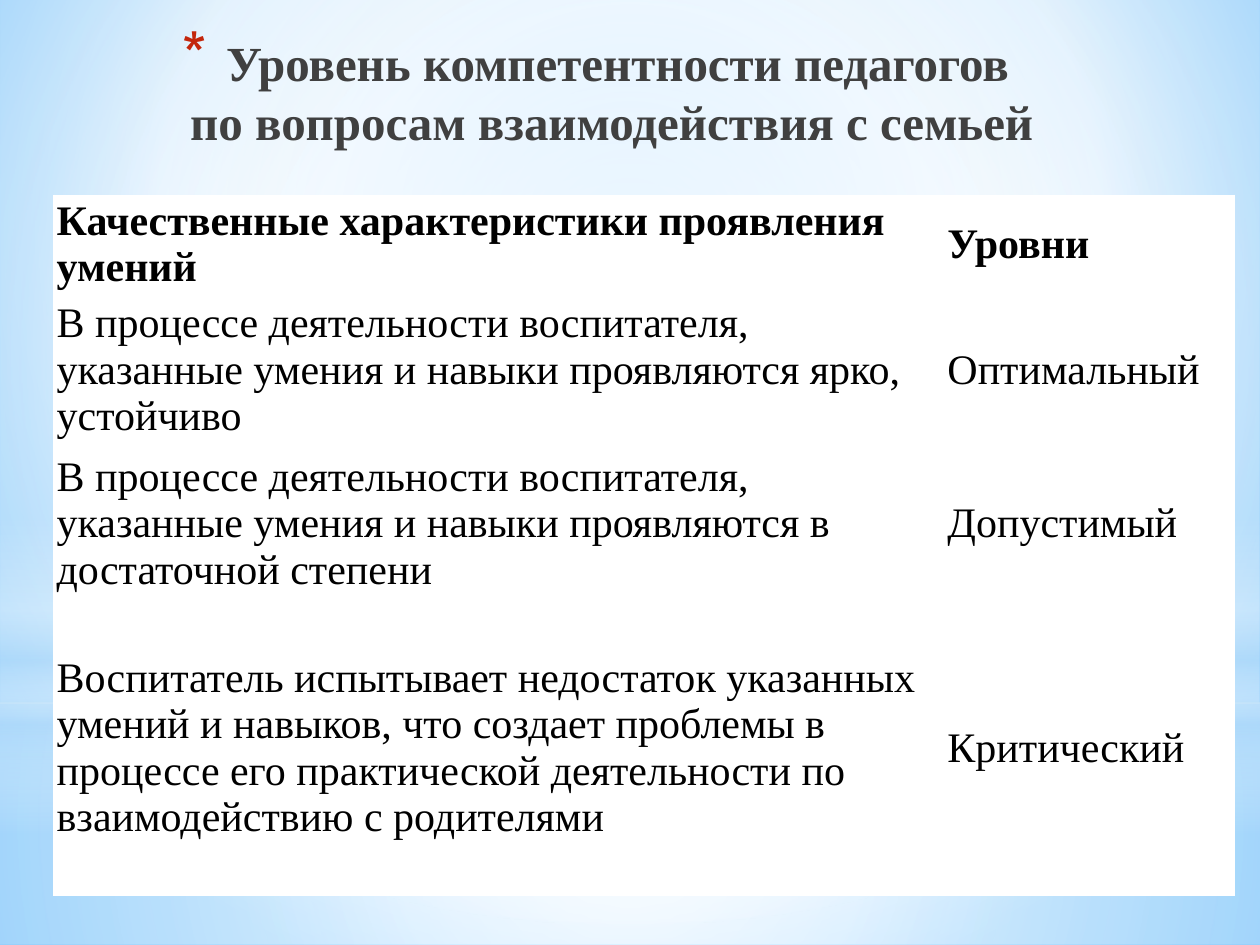
from lxml import etree
from pptx import Presentation
from pptx.dml.color import RGBColor
from pptx.enum import shapes, text
from pptx.oxml import ns
from pptx.util import Pt, Inches

hues = {"white": "FFFFFF", "ice": "B4DCFA", "sky": "9ED5FF", "blue": "5BB9FF",
        "ink": "000000", "gray": "404040", "red": "C3260C"}

deck = Presentation()
deck.slide_width, deck.slide_height = Inches(10), Inches(7.5)
col, row = deck.slide_width / 100, deck.slide_height / 75


def spot(x, y, w, h):
    return int(x * col), int(y * row), int(w * col), int(h * row)


def blend(fill, holder, stops, rect):
    fill.solid()
    old = holder.find(ns.qn("a:solidFill"))
    grad = etree.Element(ns.qn("a:gradFill"), rotWithShape="1")
    group = etree.SubElement(grad, ns.qn("a:gsLst"))
    for pos, hue, alpha in stops:
        stop = etree.SubElement(group, ns.qn("a:gs"), pos=str(pos * 1000))
        tint = etree.SubElement(stop, ns.qn("a:srgbClr"), val=hues[hue])
        if alpha < 100:
            etree.SubElement(tint, ns.qn("a:alpha"), val=str(alpha * 1000))
    if rect:
        way = etree.SubElement(grad, ns.qn("a:path"), path="circle")
        sides = {side: str(share * 1000) for side, share in zip("ltrb", rect)}
        etree.SubElement(way, ns.qn("a:fillToRect"), **sides)
    else:
        etree.SubElement(grad, ns.qn("a:lin"), ang="5400000", scaled="0")
    holder.replace(old, grad)


slide = deck.slides.add_slide(deck.slide_layouts[5])
back = slide.background.fill
back.solid()
base = slide.element.find(".//" + ns.qn("p:bgPr"))
blend(back, base, [(0, "sky", 100), (60, "white", 100), (100, "blue", 100)],
      (20, 10, 20, 60))

box, oval = shapes.MSO_SHAPE.RECTANGLE, shapes.MSO_SHAPE.OVAL
mid = (50, 50, 50, 50)
layers = [
    (box, (0, 55.8, 100, 19.2), mid,
     [(0, "white", 91), (37, "white", 76), (100, "ice", 79)]),
    (box, (0, 0, 100, 55.8), mid,
     [(0, "white", 89), (48, "white", 62), (100, "ice", 79)]),
    (box, (0, 41.2, 100, 25), None,
     [(0, "white", 0), (29, "white", 30), (45, "ice", 40),
      (55, "white", 26), (65, "ice", 60), (100, "white", 0)]),
    (oval, (0, 17.5, 100, 55.8), mid,
     [(0, "white", 100), (56, "white", 0)]),
]
for kind, area, rect, stops in layers:
    glow = slide.shapes.add_shape(kind, *spot(*area))
    glow.shadow.inherit = False
    glow.line.fill.background()
    blend(glow.fill, glow.element.spPr, stops, rect)

title = slide.shapes.title
title.element.getparent().append(title.element)
title.left, title.top, title.width, title.height = spot(5.9, 2.1, 77.1, 12.5)
frame = title.text_frame
frame.word_wrap = True
frame.auto_size = text.MSO_AUTO_SIZE.NONE
frame.vertical_anchor = text.MSO_ANCHOR.TOP
para = frame.paragraphs[0]
para.alignment = text.PP_ALIGN.RIGHT
heads = ["Уровень компетентности педагогов  ",
         "по вопросам взаимодействия с семьей"]
for n, words in enumerate(heads):
    if n:
        para.add_line_break()
    run = para.add_run()
    run.text = words
    run.font.name, run.font.size, run.font.bold = "Times New Roman", Pt(28), True
    run.font.color.rgb = RGBColor.from_string(hues["gray"])
props = para._p.get_or_add_pPr()
props.set("marL", str(Inches(0.35)))
props.set("indent", str(-Inches(0.35)))
tint = etree.SubElement(props, ns.qn("a:buClr"))
etree.SubElement(tint, ns.qn("a:srgbClr"), val=hues["red"])
etree.SubElement(props, ns.qn("a:buSzPct"), val="128000")
etree.SubElement(props, ns.qn("a:buChar"), char="*")

rows = [
    ("Качественные характеристики проявления умений", "Уровни"),
    ("В процессе деятельности воспитателя, указанные умения и навыки "
     "проявляются ярко, устойчиво", "Оптимальный"),
    ("В процессе деятельности воспитателя, указанные умения и навыки "
     "проявляются в достаточной степени", "Допустимый"),
    ("Воспитатель испытывает недостаток указанных умений и навыков, что "
     "создает проблемы в процессе его практической деятельности по "
     "взаимодействию с родителями", "Критический"),
]
table = slide.shapes.add_table(len(rows), 2, *spot(4.3, 15.5, 93.7, 54.4)).table
table.first_row = table.horz_banding = False
for part, wide in zip(table.columns, (70.7, 23)):
    part.width = int(wide * col)
for part, high in zip(table.rows, (6.6, 12.2, 12.2, 23.4)):
    part.height = int(high * row)
for r, line in enumerate(rows):
    for c, words in enumerate(line):
        cell = table.cell(r, c)
        cell.fill.solid()
        cell.fill.fore_color.rgb = RGBColor.from_string(hues["white"])
        cell.vertical_anchor = text.MSO_ANCHOR.MIDDLE
        cell.margin_left = cell.margin_right = Inches(0.02)
        cell.margin_top = cell.margin_bottom = Inches(0.02)
        run = cell.text_frame.paragraphs[0].add_run()
        run.text = words
        run.font.name, run.font.size = "Times New Roman", Pt(24)
        run.font.bold = r == 0
        run.font.color.rgb = RGBColor.from_string(hues["ink"])

deck.save("out.pptx")
